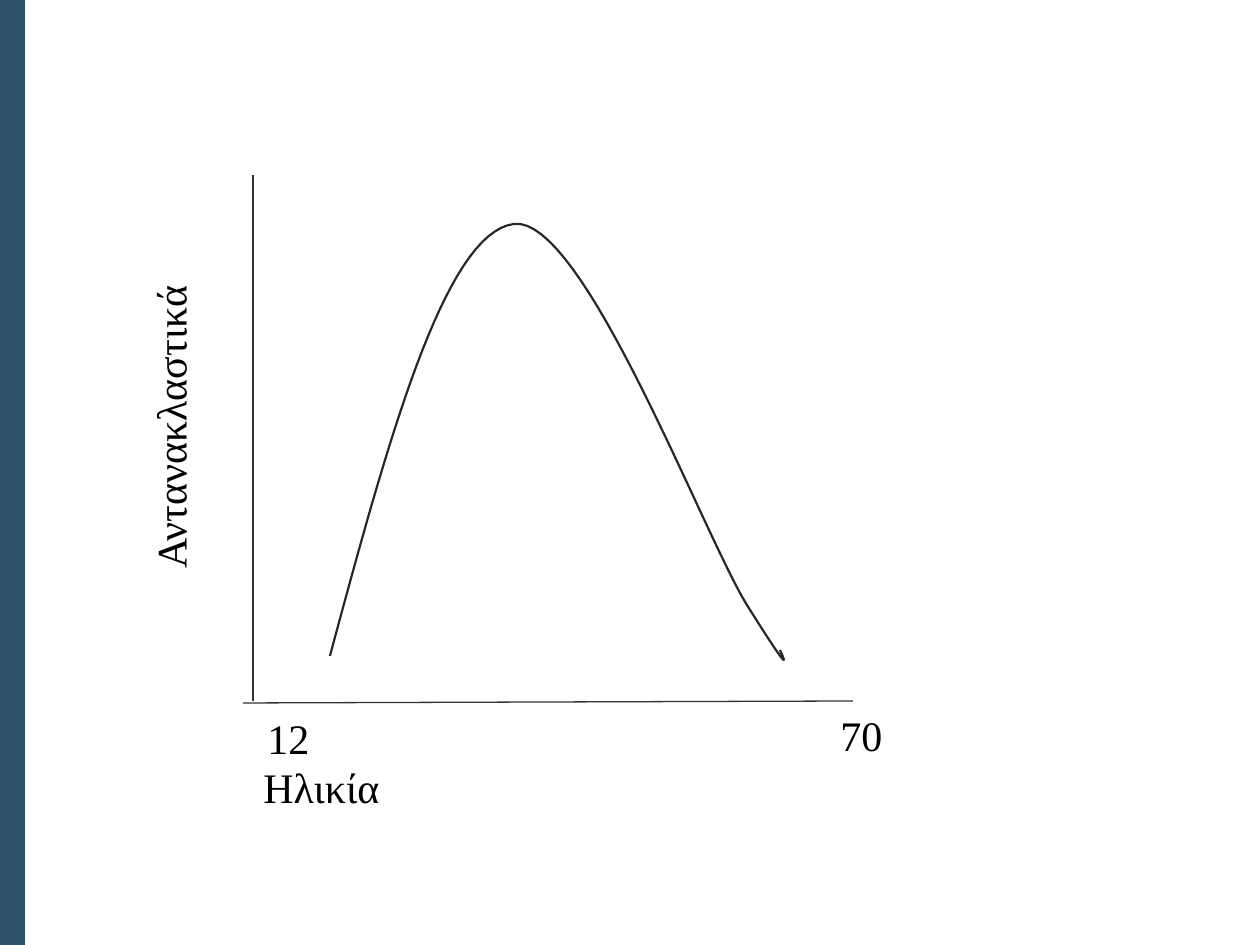
from lxml import etree
from pptx import Presentation
from pptx import util as u
from pptx.dml.color import RGBColor
from pptx.enum import shapes, text
from pptx.oxml import ns

PX = 914400 / 126
BAND = RGBColor(0x2E, 0x53, 0x69)
AXIS = RGBColor(0x33, 0x33, 0x33)
CURVE = RGBColor(0x27, 0x27, 0x27)
BLACK = RGBColor(0, 0, 0)
STEPS = 32


def emu(px):
    return u.Emu(round(px * PX))


def write(tf, string, size=24, font="Times New Roman", color=BLACK, spacing=0.93):
    p = tf.paragraphs[0]
    p.line_spacing = spacing
    r = p.add_run()
    r.text = string
    r.font.size = u.Pt(size)
    r.font.name = font
    r.font.color.rgb = color


def bezier(a, b, c, d):
    for i in range(1, STEPS + 1):
        t = i / STEPS
        s = 1 - t
        yield tuple(s**3 * m + 3 * s * s * t * n + 3 * s * t * t * o + t**3 * q
                    for m, n, o, q in zip(a, b, c, d))


class Diagram:
    """Draws the elements of a hand-made graph on one slide."""

    def __init__(self, slide):
        self.s = slide

    def band(self, x, y, w, h):
        sp = self.s.shapes.add_shape(shapes.MSO_SHAPE.RECTANGLE, *map(emu, (x, y, w, h)))
        sp.shadow.inherit = False
        sp.fill.solid()
        sp.fill.fore_color.rgb = BAND
        sp.line.fill.background()

    def axis(self, *ends):
        sp = self.s.shapes.add_connector(shapes.MSO_CONNECTOR.STRAIGHT, *map(emu, ends))
        sp.line.color.rgb = AXIS
        sp.line.width = u.Pt(0.75)
        etree.SubElement(sp._element.spPr, ns.qn("a:effectLst"))

    def label(self, string, x, y, w, h=64, rotation=0):
        sp = self.s.shapes.add_textbox(*map(emu, (x, y, w, h)))
        sp.rotation = rotation
        tf = sp.text_frame
        tf.word_wrap = False
        tf.auto_size = text.MSO_AUTO_SIZE.SHAPE_TO_FIT_TEXT
        write(tf, string)

    def curve(self, start, *segments):
        points = []
        pen = start
        for segment in segments:
            points.extend(bezier(pen, *segment))
            pen = segment[-1]
        fb = self.s.shapes.build_freeform(*map(emu, start), scale=1.0)
        fb.add_line_segments([tuple(map(emu, pt)) for pt in points], close=False)
        sp = fb.convert_to_shape()
        sp.shadow.inherit = False
        sp.fill.background()
        sp.line.color.rgb = CURVE
        sp.line.width = u.Pt(1.25)


def main():
    prs = Presentation()
    prs.slide_width, prs.slide_height = emu(1260), emu(945)
    d = Diagram(prs.slides.add_slide(prs.slide_layouts[6]))
    d.band(0, 0, 25, 945)
    d.axis(253, 175, 253, 701)
    d.axis(243, 703, 853, 701)
    d.label("Ηλικία", 251, 760, 142)
    d.label("12", 255, 711, 68)
    d.label("70", 828, 708, 68)
    d.label("Αντανακλαστικά", 19, 393, 312, rotation=270)
    d.curve((330, 656),
            ((387, 445), (444, 233), (514, 224)),
            ((583, 215), (703, 534), (747, 605)),
            ((791, 675), (786, 663), (780, 650)))
    prs.save("out.pptx")


if __name__ == "__main__":
    main()
